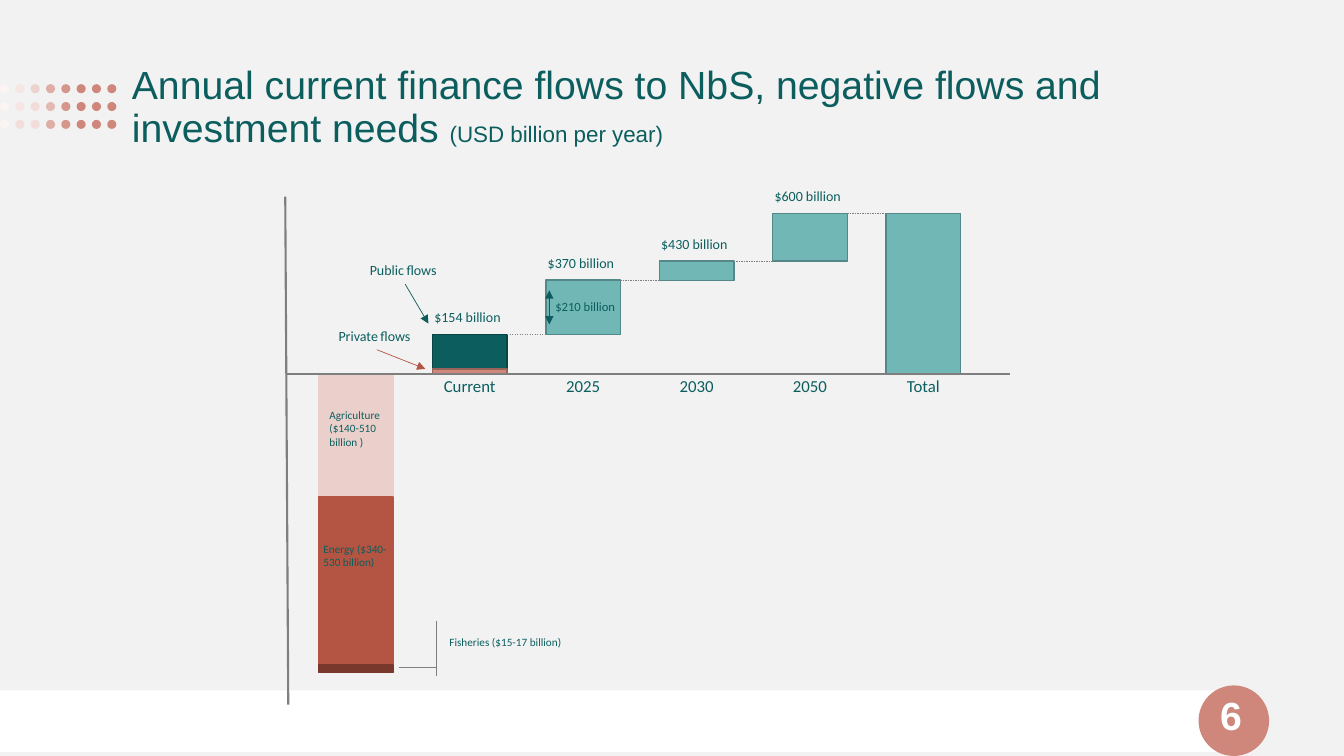
import lxml.etree
import pptx
import pptx.dml.color
import pptx.enum.dml
import pptx.enum.shapes
import pptx.enum.text
import pptx.oxml.ns
import pptx.util

SHAPE = pptx.enum.shapes.MSO_SHAPE
ALIGN = pptx.enum.text.PP_ALIGN
ANCHOR = pptx.enum.text.MSO_ANCHOR
TEAL, AQUA, AQUA_EDGE = "0C5E5E", "71B7B6", "548787"
ROSE, BRICK, GREY, WHITE = "CE877A", "B45442", "7F7F7F", "FFFFFF"


def rgb(code):
    return pptx.dml.color.RGBColor.from_string(code)


class FinanceSlide:
    """Draws elements on one slide, placed by columns and rows of a fine grid."""

    COLUMNS, ROWS = 133.33, 75

    def __init__(self, deck, background):
        self.column = deck.slide_width / self.COLUMNS
        self.row = deck.slide_height / self.ROWS
        self.slide = deck.slides.add_slide(deck.slide_layouts[6])
        self.slide.background.fill.solid()
        self.slide.background.fill.fore_color.rgb = rgb(background)

    def place(self, x, y):
        return round(x * self.column), round(y * self.row)

    def block(self, x, y, width, height, fill, edge=None, kind=SHAPE.RECTANGLE):
        block = self.slide.shapes.add_shape(
            kind, *self.place(x, y), *self.place(width, height))
        block.shadow.inherit = False
        block.fill.solid()
        block.fill.fore_color.rgb = rgb(fill)
        if edge:
            block.line.color.rgb = rgb(edge)
            block.line.width = pptx.util.Pt(1)
        else:
            block.line.fill.background()

    def line(self, start, end, color=GREY, weight=0.25, dashed=False, arrows=()):
        line = self.slide.shapes.add_connector(
            pptx.enum.shapes.MSO_CONNECTOR.STRAIGHT,
            *self.place(*start), *self.place(*end))
        line.line.color.rgb = rgb(color)
        line.line.width = pptx.util.Pt(weight)
        if dashed:
            line.line.dash_style = pptx.enum.dml.MSO_LINE.DASH
        outline = line.line._get_or_add_ln()
        for end_name in arrows:
            lxml.etree.SubElement(
                outline, pptx.oxml.ns.qn(f"a:{end_name}"), type="triangle")
        lxml.etree.SubElement(
            line._element.spPr, pptx.oxml.ns.qn("a:effectLst"))

    def text(self, runs, x, y, width, height, size=10, font="Calibri",
             color=TEAL, bold=False, align=ALIGN.LEFT, anchor=ANCHOR.TOP,
             wrap=True, spacing=None):
        frame = self.slide.shapes.add_textbox(
            *self.place(x, y), *self.place(width, height)).text_frame
        frame.word_wrap = wrap
        frame.vertical_anchor = anchor
        paragraph = frame.paragraphs[0]
        paragraph.alignment = align
        if spacing:
            paragraph.line_spacing = spacing
        for words, run_size in [(runs, size)] if isinstance(runs, str) else runs:
            run = paragraph.add_run()
            run.text = words
            run.font.size = pptx.util.Pt(run_size)
            run.font.name = font
            run.font.bold = bold
            run.font.color.rgb = rgb(color)


def draw_frame(page):
    page.block(0, 68.5, 122.4, 6.1, WHITE)
    page.block(118.9, 68, 7, 7, ROSE, kind=SHAPE.OVAL)
    faded_dots = [
        ["FBF4F3", "F5E5E3", "EDD3CF", "DEAEA6"],
        ["FBF4F3", "F5E5E3", "F2DDDA", "E3BAB3"],
        ["FBF4F3", "F2DDDA", "F2DDDA", "DEAEA6"],
    ]
    for row, faded in enumerate(faded_dots):
        for column, color in enumerate(faded + ["D5968B"] + [ROSE] * 3):
            page.block(1.52 * column, 8.35 + 1.77 * row, 0.9, 0.9, color,
                       kind=SHAPE.OVAL)
    page.text([("Annual current finance flows to NbS, negative flows and "
                "investment needs ", 28), ("(USD billion per year)", 16)],
              12.1, 3.5, 112, 14.5, font="Arial", anchor=ANCHOR.MIDDLE,
              spacing=0.9)
    page.text("6", 94.2, 68.9, 30, 4, size=28, font="Arial", color=WHITE,
              bold=True, align=ALIGN.RIGHT, anchor=ANCHOR.MIDDLE)


def draw_negative_flows(page, axis, bar_width):
    top = axis
    for height, color in [(12.2, "EBCFCA"), (16.6, BRICK), (0.8, "78382C")]:
        page.block(31.6, top, bar_width, height, color, color)
        top += height
    page.text("Agriculture ($140-510 billion )", 31.7, 40, 9.2, 5, size=8)
    page.text("Energy ($340-530 billion)", 31.1, 53.3, 9.3, 3.7, size=8)
    page.text("Fisheries ($15-17 billion)", 43.6, 62.5, 18.5, 2.4, size=8)
    page.line((39.6, 66.2), (43.3, 66.2))
    page.line((43.3, 61.6), (43.3, 67.1))


def draw_investment_needs(page, axis, bar_width):
    first_left, pitch, private_top = 42.9, 11.25, 36.6
    steps = [("Current", 33.2, "$154 billion"), ("2025", 27.8, "$370 billion"),
             ("2030", 25.9, "$430 billion"), ("2050", 21.2, "$600 billion"),
             ("Total", 21.2, None)]
    base = axis
    for index, (name, top, amount) in enumerate(steps):
        left = first_left + pitch * index
        if name == "Current":
            page.block(left, top, bar_width, private_top - top, TEAL, "094646")
            page.block(left, private_top, bar_width, axis - private_top, ROSE,
                       "98645A")
        else:
            bottom = axis if name == "Total" else base
            page.block(left, top, bar_width, bottom - top, AQUA, AQUA_EDGE)
            page.line((left - pitch + bar_width, base), (left, base), dashed=True)
        page.text(name, left, 36.75, bar_width, 3, size=12, align=ALIGN.CENTER,
                  wrap=False)
        if amount:
            page.text(amount, left - 0.8, top - 3.05, 9, 2.7)
        base = top


def draw_callouts(page):
    page.text([("Public", 10), (" ", 8), ("flows", 10)], 35.7, 25.5, 9, 2.7)
    page.line((40.2, 28.2), (42.5, 32.1), TEAL, 0.5, arrows=["tailEnd"])
    page.text([("Private", 10), (" ", 8), ("flows", 10)], 32.6, 32, 9.7, 2.7)
    page.line((37.4, 34.7), (42.2, 36.6), BRICK, 0.5, arrows=["tailEnd"])
    page.text("$210 billion", 54.1, 29.2, 10.1, 2.5, size=9)
    page.line((54.5, 28.8), (54.5, 32.2), TEAL, 0.5,
              arrows=["headEnd", "tailEnd"])


def main():
    deck = pptx.Presentation()
    deck.slide_width = pptx.util.Inches(13.33)
    deck.slide_height = pptx.util.Inches(7.5)
    page = FinanceSlide(deck, "F2F2F2")
    axis, bar_width = 37.1, 7.4
    draw_frame(page)
    draw_negative_flows(page, axis, bar_width)
    draw_investment_needs(page, axis, bar_width)
    page.line((28.5, axis), (100.2, axis), weight=1.5)
    page.line((28.3, 19.5), (28.6, 69.9), weight=1.5)
    draw_callouts(page)
    deck.save("out.pptx")


if __name__ == "__main__":
    main()
